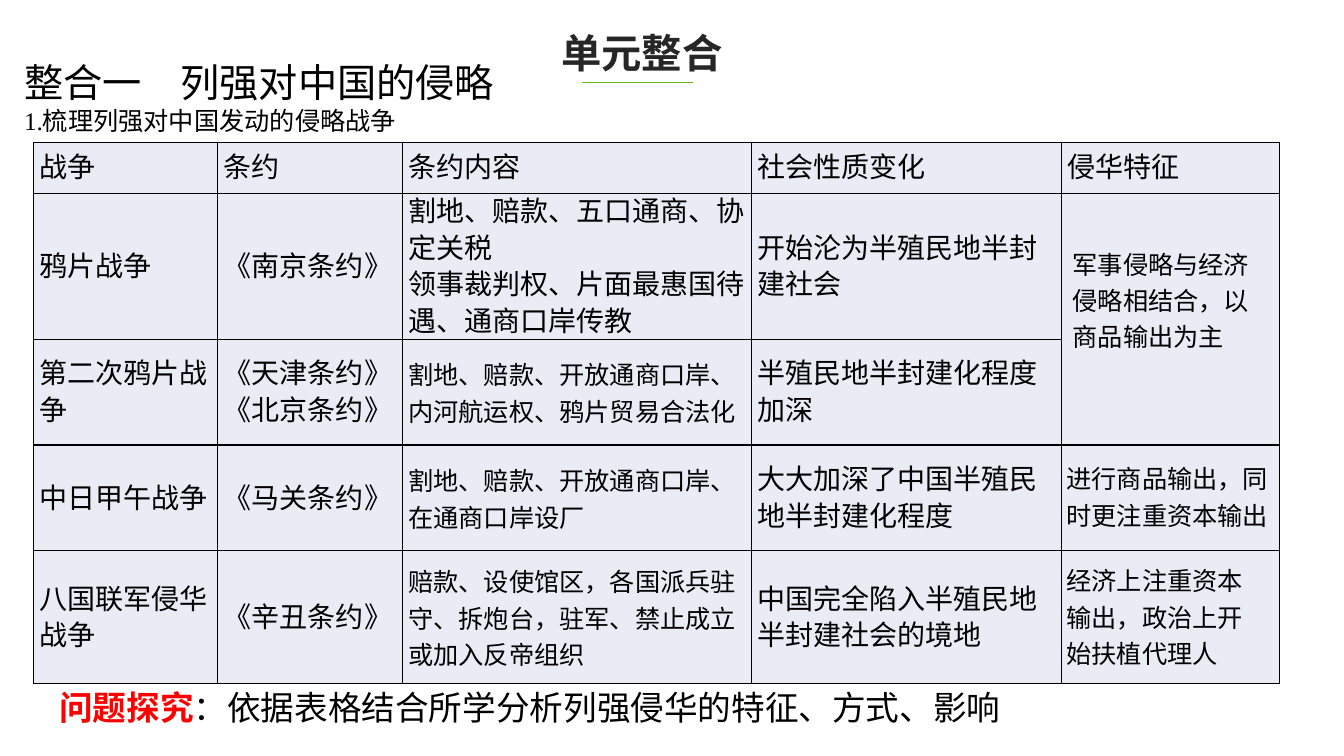
from dataclasses import dataclass

from lxml import etree
from pptx import Presentation
from pptx.dml.color import RGBColor
from pptx.enum.shapes import MSO_CONNECTOR
from pptx.enum.text import MSO_ANCHOR, MSO_AUTO_SIZE, PP_ALIGN
from pptx.oxml.ns import qn
from pptx.util import Inches, Pt

STRAIGHT = MSO_CONNECTOR.STRAIGHT
MIDDLE = MSO_ANCHOR.MIDDLE
GROW = MSO_AUTO_SIZE.SHAPE_TO_FIT_TEXT
LEFT, CENTER = PP_ALIGN.LEFT, PP_ALIGN.CENTER


@dataclass(frozen=True)
class Theme:
    sans: str = "Noto Sans CJK SC"
    serif: str = "Times New Roman"
    black: str = "000000"
    title: str = "262626"
    accent: str = "FF0000"
    green: str = "67BC22"
    cell: str = "E9EBF5"
    title_size: float = 28.8
    heading_size: float = 28
    question_size: float = 24
    table_size: float = 20
    small_size: float = 18
    leading: float = 26


THEME = Theme()


@dataclass(frozen=True)
class Span:
    text: str
    size: float = THEME.small_size
    color: str = THEME.black
    bold: bool = False
    font: str = THEME.sans


@dataclass(frozen=True)
class TextBox:
    left: float
    top: float
    width: float
    height: float
    lines: list[list[Span]]
    wrap: bool = True
    align: PP_ALIGN = LEFT
    leading: float | None = None


@dataclass(frozen=True)
class War:
    name: str
    treaty: str
    terms: list[str]
    change: str
    terms_size: float = THEME.small_size


COLUMN_WIDTHS = [1.83, 1.83, 3.46, 3.08, 2.16]
ROW_HEIGHTS = [0.51, 1.41, 1.05, 1.05, 1.32]
HEADERS = ["战争", "条约", "条约内容", "社会性质变化", "侵华特征"]
WARS = [
    War("鸦片战争", "《南京条约》",
        ["割地、赔款、五口通商、协定关税", "领事裁判权、片面最惠国待遇、通商口岸传教"],
        "开始沦为半殖民地半封建社会", THEME.table_size),
    War("第二次鸦片战争", "《天津条约》《北京条约》",
        ["割地、赔款、开放通商口岸、内河航运权、鸦片贸易合法化"],
        "半殖民地半封建化程度加深"),
    War("中日甲午战争", "《马关条约》",
        ["割地、赔款、开放通商口岸、在通商口岸设厂"],
        "大大加深了中国半殖民地半封建化程度"),
    War("八国联军侵华战争", "《辛丑条约》",
        ["赔款、设使馆区，各国派兵驻守、拆炮台，驻军、禁止成立或加入反帝组织"],
        "中国完全陷入半殖民地半封建社会的境地"),
]
BOXES = [
    TextBox(5.46, 0.23, 1.81, 0.59,
            [[Span("单元整合", THEME.title_size, THEME.title, True)]],
            wrap=False, align=CENTER),
    TextBox(0.14, 0.53, 4.91, 0.88,
            [[Span("整合一　列强对中国的侵略", THEME.heading_size, font=THEME.serif)],
             [Span("1.梳理列强对中国发动的侵略战争", font=THEME.serif)]],
            wrap=False),
    TextBox(0.49, 6.77, 11.3, 0.5,
            [[Span("问题探究", THEME.question_size, THEME.accent, True),
              Span("：依据表格结合所学分析列强侵华的特征、方式、影响", THEME.question_size)]]),
    TextBox(10.54, 2.36, 2.14, 1.17,
            [[Span("军事侵略与经济侵略相结合，以商品输出为主")]], leading=THEME.leading),
    TextBox(10.48, 4.49, 2.24, 0.8,
            [[Span("进行商品输出，同时更注重资本输出")]], leading=THEME.leading),
    TextBox(10.48, 5.5, 2.14, 1.17,
            [[Span("经济上注重资本输出，政治上开始扶植代理人")]], leading=THEME.leading),
]


def add_span(para, text: str, *, size: float, color: str, bold: bool, font: str) -> None:
    run = para.add_run()
    run.text = text
    run.font.size = Pt(size)
    run.font.bold = bold
    run.font.color.rgb = RGBColor.from_string(color)
    run.font.name = font
    east_asian = etree.SubElement(run._r.get_or_add_rPr(), qn("a:ea"))
    east_asian.set("typeface", THEME.sans)


def write_lines(frame, lines: list[list[Span]], *, align: PP_ALIGN = LEFT,
                leading: float | None = None) -> None:
    for index, spans in enumerate(lines):
        para = frame.add_paragraph() if index else frame.paragraphs[0]
        para.alignment = align
        if leading:
            para.line_spacing = Pt(leading)
        for span in spans:
            add_span(para, span.text, size=span.size, color=span.color,
                     bold=span.bold, font=span.font)


def add_text_box(page, item: TextBox) -> None:
    box = page.shapes.add_textbox(Inches(item.left), Inches(item.top),
                                  Inches(item.width), Inches(item.height))
    frame = box.text_frame
    frame.word_wrap = item.wrap
    frame.auto_size = GROW
    write_lines(frame, item.lines, align=item.align, leading=item.leading)


def style_cell(cell) -> None:
    cell.vertical_anchor = MIDDLE
    cell.margin_left = cell.margin_right = Inches(0.06)
    cell.margin_top = cell.margin_bottom = 0
    properties = cell._tc.get_or_add_tcPr()
    for side in ("a:lnL", "a:lnR", "a:lnT", "a:lnB"):
        border = etree.SubElement(properties, qn(side), w=str(Pt(1)))
        fill = etree.SubElement(border, qn("a:solidFill"))
        etree.SubElement(fill, qn("a:srgbClr"), val=THEME.black)
    cell.fill.solid()
    cell.fill.fore_color.rgb = RGBColor.from_string(THEME.cell)


def add_war_table(page) -> None:
    table = page.shapes.add_table(
        len(ROW_HEIGHTS), len(COLUMN_WIDTHS), Inches(0.33), Inches(1.41),
        Inches(sum(COLUMN_WIDTHS)), Inches(sum(ROW_HEIGHTS))).table
    table.first_row = table.horz_banding = False
    for column, width in zip(table.columns, COLUMN_WIDTHS):
        column.width = Inches(width)
    for row, height in zip(table.rows, ROW_HEIGHTS):
        row.height = Inches(height)
    for cell in table.iter_cells():
        style_cell(cell)
    table.cell(1, 4).merge(table.cell(2, 4))

    for index, header in enumerate(HEADERS):
        write_lines(table.cell(0, index).text_frame, [[Span(header, THEME.table_size)]],
                    leading=THEME.leading)
    for row_index, war in enumerate(WARS, start=1):
        columns = [([war.name], THEME.table_size), ([war.treaty], THEME.table_size),
                   (war.terms, war.terms_size), ([war.change], THEME.table_size)]
        for column_index, (texts, size) in enumerate(columns):
            write_lines(table.cell(row_index, column_index).text_frame,
                        [[Span(text, size)] for text in texts],
                        leading=THEME.leading if size == THEME.table_size else None)


def add_title_rule(page) -> None:
    rule = page.shapes.add_connector(STRAIGHT, Inches(5.77), Inches(0.82),
                                     Inches(6.87), Inches(0.82))
    rule.line.color.rgb = RGBColor.from_string(THEME.green)
    rule.line.width = Pt(0.5)
    etree.SubElement(rule._element.spPr, qn("a:effectLst"))


def main() -> None:
    deck = Presentation()
    deck.slide_width, deck.slide_height = Inches(13.33), Inches(7.5)
    page = deck.slides.add_slide(deck.slide_layouts[6])
    add_war_table(page)
    add_title_rule(page)
    for item in BOXES:
        add_text_box(page, item)
    deck.save("out.pptx")


if __name__ == "__main__":
    main()
